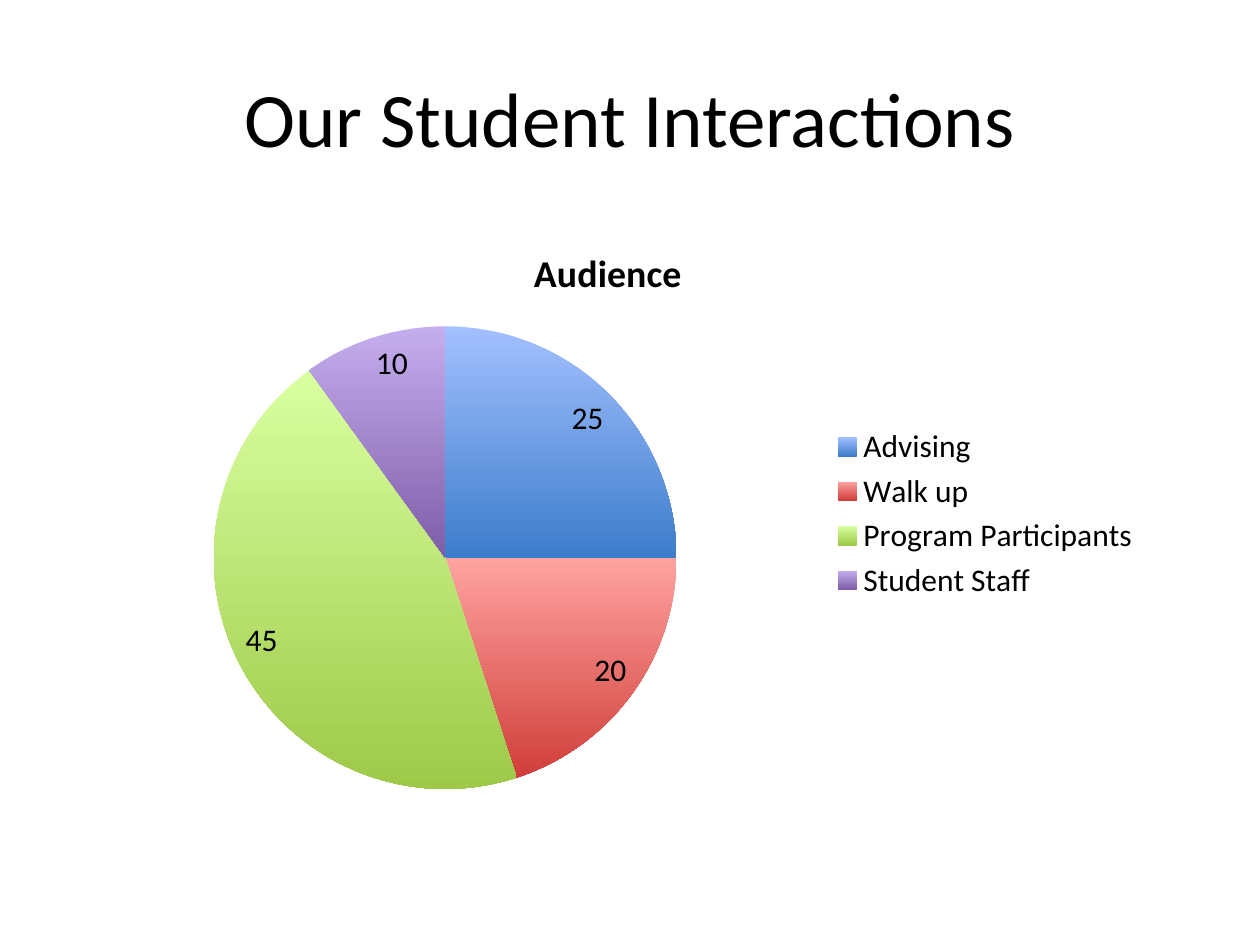
from pptx import Presentation
from pptx.chart.data import CategoryChartData
from pptx.dml.color import RGBColor
from pptx.enum.chart import XL_CHART_TYPE, XL_LABEL_POSITION, XL_LEGEND_POSITION
from pptx.enum.text import MSO_ANCHOR, PP_ALIGN
from pptx.util import Inches, Pt

BLACK = RGBColor(0x00, 0x00, 0x00)
FONT_NAME = "Calibri"

# Audience group: value, top colour and bottom colour of its slice
AUDIENCE = {
    "Advising": (25, RGBColor(0xA3, 0xC0, 0xFF), RGBColor(0x3D, 0x7D, 0xCB)),
    "Walk up": (20, RGBColor(0xFF, 0xA3, 0xA1), RGBColor(0xD0, 0x3E, 0x3A)),
    "Program Participants": (45, RGBColor(0xDA, 0xFF, 0xA1), RGBColor(0x9E, 0xC9, 0x48)),
    "Student Staff": (10, RGBColor(0xC5, 0xAE, 0xEE), RGBColor(0x7F, 0x5D, 0xA8)),
}


def format_font(font, size, bold=False):
    values = {"name": FONT_NAME, "size": Pt(size), "bold": bold}
    for name, value in values.items():
        setattr(font, name, value)
    font.color.rgb = BLACK


def add_title(page, text):
    box = page.shapes.add_textbox(Inches(0.5), Inches(0.3), Inches(9), Inches(1.25))
    frame = box.text_frame
    frame.word_wrap = True
    frame.vertical_anchor = MSO_ANCHOR.MIDDLE
    para = frame.paragraphs[0]
    para.alignment = PP_ALIGN.CENTER
    span = para.add_run()
    span.text = text
    format_font(span.font, 44)


def fill_slice(point, top_colour, bottom_colour):
    fill = point.format.fill
    fill.gradient()
    fill.gradient_angle = 270
    for stop, colour in zip(fill.gradient_stops, (top_colour, bottom_colour)):
        stop.color.rgb = colour


def add_audience_pie(page):
    data = CategoryChartData()
    data.categories = list(AUDIENCE)
    data.add_series("Audience", [value for value, _, _ in AUDIENCE.values()])
    chart = page.shapes.add_chart(
        XL_CHART_TYPE.PIE, Inches(0.5), Inches(1.75), Inches(8.65), Inches(4.65), data
    ).chart
    format_font(chart.font, 18)

    # Chart title
    chart.has_title = True
    title = chart.chart_title
    title.include_in_layout = False
    para = title.text_frame.paragraphs[0]
    span = para.add_run()
    span.text = "Audience"
    format_font(span.font, 21.6, bold=True)

    # Legend
    chart.has_legend = True
    chart.legend.position = XL_LEGEND_POSITION.RIGHT
    chart.legend.include_in_layout = False
    format_font(chart.legend.font, 18)

    # Slices and their values
    plot = chart.plots[0]
    plot.vary_by_categories = True
    plot.has_data_labels = True
    labels = plot.data_labels
    labels.show_value = True
    labels.show_percentage = False
    labels.position = XL_LABEL_POSITION.INSIDE_END
    format_font(labels.font, 18)
    for index, (_, top_colour, bottom_colour) in enumerate(AUDIENCE.values()):
        fill_slice(plot.series[0].points[index], top_colour, bottom_colour)


def main():
    deck = Presentation()
    deck.slide_width = Inches(10)
    deck.slide_height = Inches(7.5)
    page = deck.slides.add_slide(deck.slide_layouts[6])
    add_title(page, "Our Student Interactions")
    add_audience_pie(page)
    deck.save("out.pptx")


if __name__ == "__main__":
    main()
